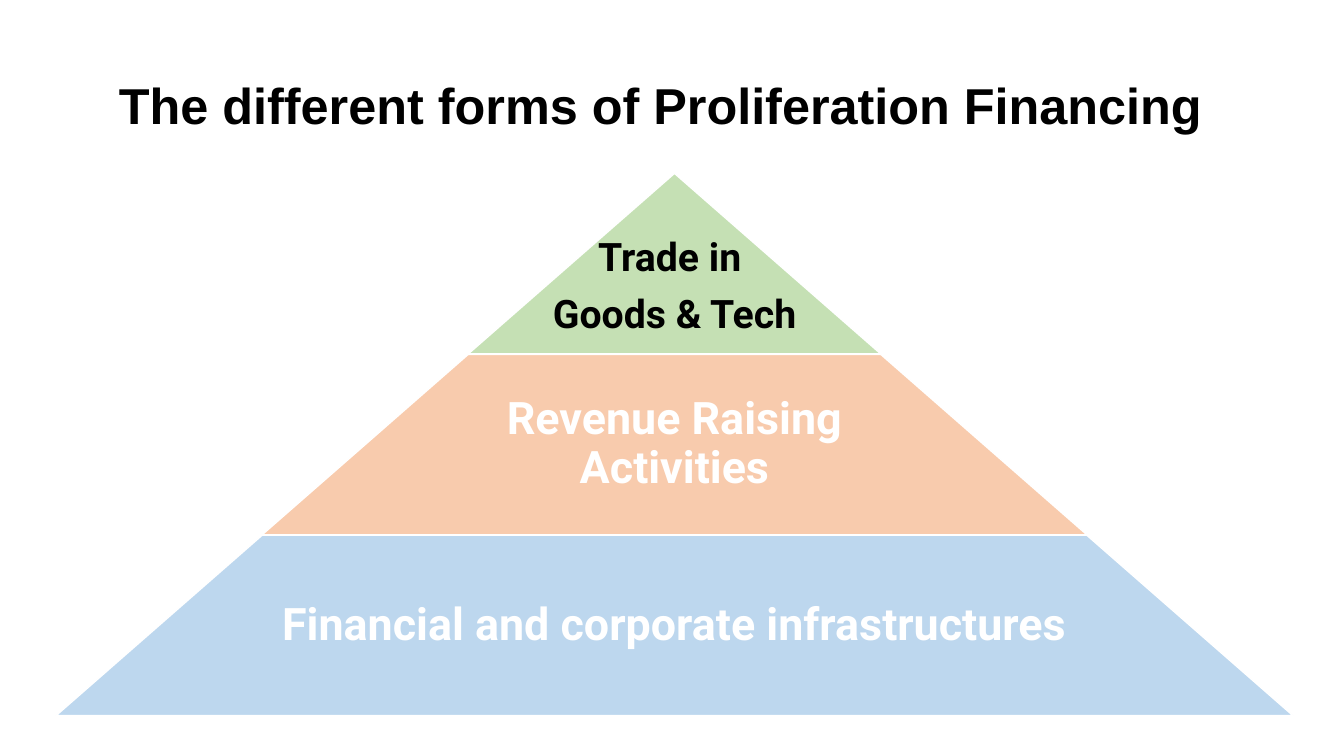
from dataclasses import dataclass
from pptx import Presentation
from pptx.dml.color import RGBColor
from pptx.enum.shapes import MSO_SHAPE
from pptx.enum.text import MSO_ANCHOR, MSO_AUTO_SIZE, PP_ALIGN
from pptx.util import Pt

PX = 9144
MID, TOP, STEP, HIGH = 669, 172, 409, 179


@dataclass(frozen=True)
class Theme:
    black: str = "000000"
    white: str = "FFFFFF"
    green: str = "C5E0B4"
    peach: str = "F8CBAD"
    blue: str = "BDD7EE"
    head: str = "Arial"
    body: str = "Roboto"
    title: int = 36
    large: int = 32
    small: int = 28


THEME = Theme()


def scale(*sides):
    return [round(side * PX) for side in sides]


def write(frame, text, face, size, color, after=0):
    frame.text = text
    frame.word_wrap = True
    frame.auto_size = MSO_AUTO_SIZE.NONE
    frame.vertical_anchor = MSO_ANCHOR.MIDDLE
    for para in frame.paragraphs:
        para.alignment = PP_ALIGN.CENTER
        para.line_spacing = 0.9
        para.space_before = Pt(0)
        para.space_after = Pt(after)
        for run in para.runs:
            run.font.name = face
            run.font.size = Pt(size)
            run.font.bold = True
            run.font.color.rgb = RGBColor.from_string(color)


def add_title(slide, text):
    title = slide.shapes.title
    title.left, title.top, title.width, title.height = scale(56, 75, 1199, 65)
    write(title.text_frame, text, THEME.head, THEME.title, THEME.black)


def add_tier(slide, rank, fill):
    wide = STEP * (rank + 1)
    box = scale(MID - wide / 2, TOP + HIGH * rank + rank / 2, wide, HIGH)
    tier = slide.shapes.add_shape(MSO_SHAPE.TRAPEZOID, *box)
    tier.adjustments[0] = STEP / 2 / HIGH
    tier.shadow.inherit = False
    tier.fill.solid()
    tier.fill.fore_color.rgb = RGBColor.from_string(fill)
    tier.line.color.rgb = RGBColor.from_string(THEME.white)
    tier.line.width = Pt(1)


def add_label(slide, rank, text, size, color, share, drop):
    wide = STEP * (rank + 1) * share
    box = scale(MID - wide / 2, TOP + HIGH * rank + rank / 2, wide, HIGH)
    frame = slide.shapes.add_textbox(*box).text_frame
    frame.margin_left = frame.margin_right = frame.margin_bottom = 4 * PX
    frame.margin_top = (4 + drop) * PX
    write(frame, text, THEME.body, size, color, round(size * 0.35))


def main():
    deck = Presentation()
    deck.slide_width, deck.slide_height = scale(1333, 750)
    slide = deck.slides.add_slide(deck.slide_layouts[5])
    add_title(slide, "The different forms of Proliferation Financing")
    tiers = [
        (THEME.green, "Trade in \nGoods & Tech", THEME.small, THEME.black, 1, 47),
        (THEME.peach, "Revenue Raising Activities", THEME.large, THEME.white, 0.65, 0),
        (THEME.blue, "Financial and corporate infrastructures", THEME.large, THEME.white, 0.65, 0),
    ]
    for rank, (fill, *label) in enumerate(tiers):
        add_tier(slide, rank, fill)
        add_label(slide, rank, *label)
    deck.save("out.pptx")


if __name__ == "__main__":
    main()
